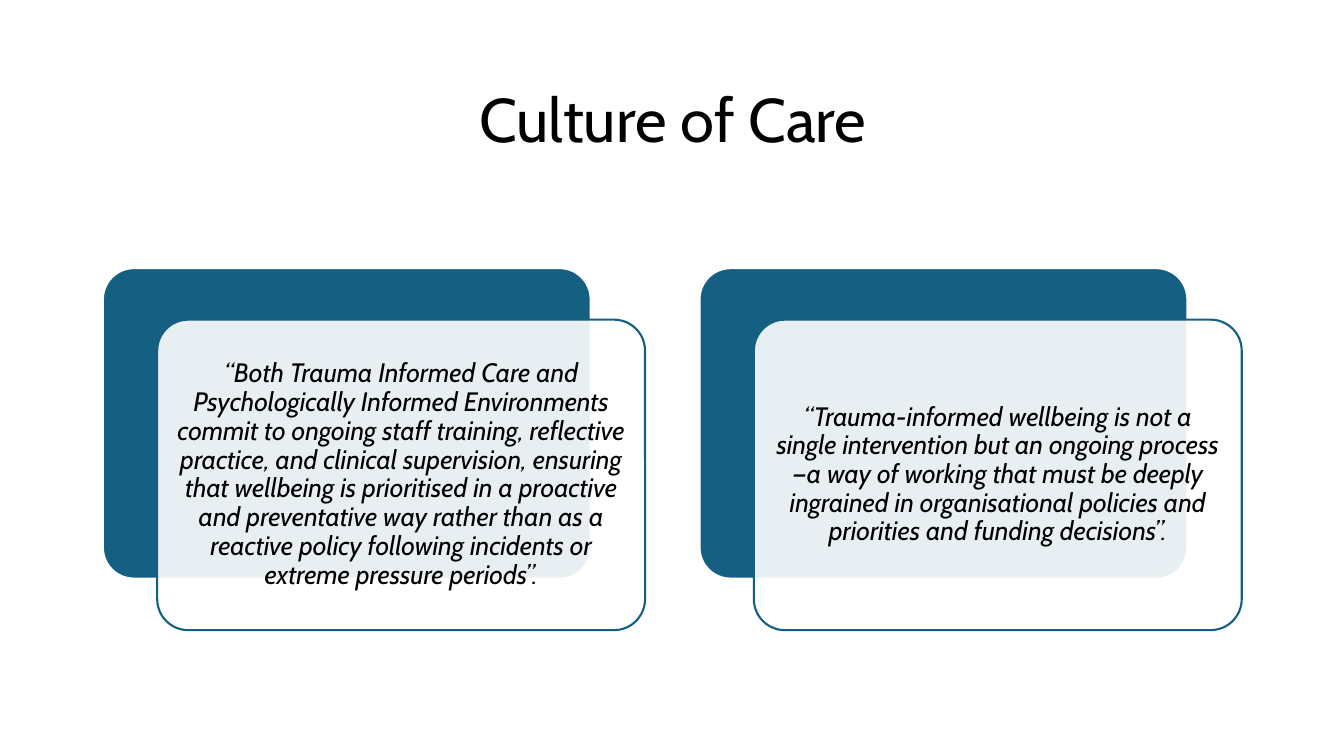
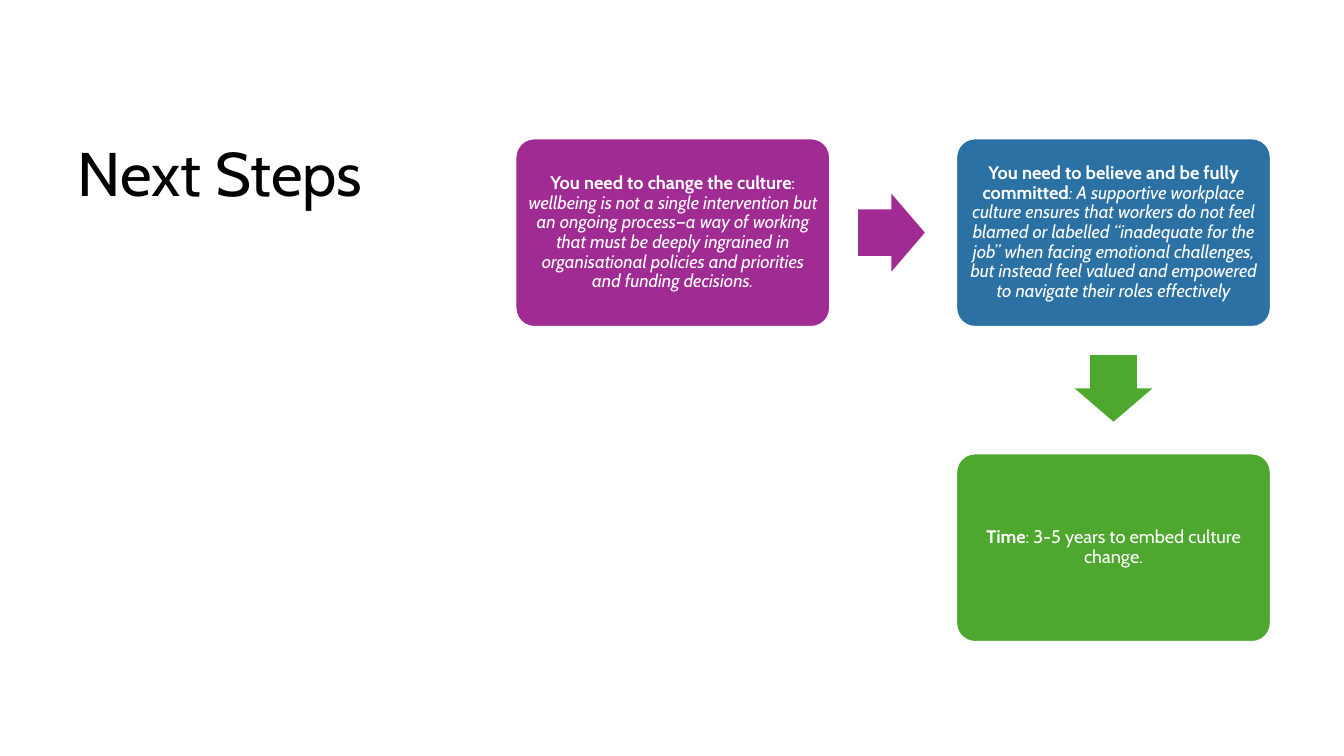
from lxml import etree
from pptx import Presentation
from pptx.dml.color import RGBColor
from pptx.enum.shapes import MSO_SHAPE
from pptx.enum.text import MSO_ANCHOR, MSO_AUTO_SIZE, PP_ALIGN
from pptx.oxml.ns import qn
from pptx.util import Pt

ROUNDED = MSO_SHAPE.ROUNDED_RECTANGLE
RIGHT_ARROW, DOWN_ARROW = MSO_SHAPE.RIGHT_ARROW, MSO_SHAPE.DOWN_ARROW
LEFT, CENTER = PP_ALIGN.LEFT, PP_ALIGN.CENTER
TOP, MIDDLE = MSO_ANCHOR.TOP, MSO_ANCHOR.MIDDLE
NO_AUTOFIT = MSO_AUTO_SIZE.NONE

FONT = "Cabin"
COLORS = {
    "text": "000000",
    "white": "FFFFFF",
    "teal": "156082",
    "purple": "A02B93",
    "blue": "2C71A4",
    "green": "4EA72E",
}
TITLE_ONLY = 5

QUOTES = [
    "“Both Trauma Informed Care and Psychologically Informed Environments commit "
    "to ongoing staff training, reflective practice, and clinical supervision, "
    "ensuring that wellbeing is prioritised in a proactive and preventative way "
    "rather than as a reactive policy following incidents or extreme pressure "
    "periods”.",
    "“Trauma-informed wellbeing is not a single intervention but an ongoing "
    "process—a way of working that must be deeply ingrained in organisational "
    "policies and priorities and funding decisions”.",
]
QUOTE_LEFT, QUOTE_TOP = 73.5, 191.5
QUOTE_WIDTH, QUOTE_HEIGHT = 348.5, 221.8
QUOTE_PITCH = 426.2
FRONT_DX, FRONT_DY = 38.8, 36.8

STEP_LEFT, STEP_TOP = 368.2, 98.8
STEP_WIDTH, STEP_HEIGHT = 224.8, 134.8
STEP_PITCH_X, STEP_PITCH_Y = 314.8, 225
ARROW_LENGTH, ARROW_BREADTH, ARROW_GAP = 47.6, 55.6, 20

# column, row, fill, runs of (text, style)
STEPS = [
    (0, 0, "purple", [
        ("You need to change the culture", "bold"),
        (": ", "plain"),
        ("wellbeing is not a single intervention but an ongoing process—a way of "
         "working that must be deeply ingrained in organisational policies and "
         "priorities and funding decisions.", "italic"),
    ]),
    (1, 0, "blue", [
        ("You need to believe and be fully committed", "bold"),
        (": A supportive workplace culture ensures that workers do not feel blamed "
         "or labelled “inadequate for the job” when facing emotional challenges, "
         "but instead feel valued and empowered to navigate their roles "
         "effectively", "italic"),
    ]),
    (1, 1, "green", [
        ("Time", "bold"),
        (": 3-5 years to embed culture change.", "plain"),
    ]),
]


def rgb(color):
    return RGBColor.from_string(COLORS[color])


def format_paragraph(paragraph, size, color, align):
    paragraph.alignment = align
    paragraph.line_spacing = 0.9
    paragraph.font.name = FONT
    paragraph.font.size = Pt(size)
    paragraph.font.color.rgb = rgb(color)


def add_titled_slide(prs, title, box, align, anchor):
    slide = prs.slides.add_slide(prs.slide_layouts[TITLE_ONLY])
    heading = slide.shapes.title
    heading.left, heading.top, heading.width, heading.height = map(Pt, box)
    frame = heading.text_frame
    frame.text = title
    frame.auto_size = NO_AUTOFIT
    frame.vertical_anchor = anchor
    format_paragraph(frame.paragraphs[0], 44, "text", align)
    return slide


def add_block(slide, kind, box, fill, adjustments, outline=None):
    block = slide.shapes.add_shape(kind, *map(Pt, box))
    block.shadow.inherit = False
    for index, value in enumerate(adjustments):
        block.adjustments[index] = value
    block.fill.solid()
    block.fill.fore_color.rgb = rgb(fill)
    if outline:
        block.line.color.rgb = rgb(outline)
        block.line.width = Pt(1.5)
    else:
        block.line.fill.background()
    return block


def add_card(slide, box, fill, outline):
    return add_block(slide, ROUNDED, box, fill, [0.1], outline)


def write_card(card, runs, size, color, margin):
    frame = card.text_frame
    frame.word_wrap = True
    frame.vertical_anchor = MIDDLE
    frame.margin_left = frame.margin_right = Pt(margin)
    frame.margin_top = frame.margin_bottom = Pt(margin)
    paragraph = frame.paragraphs[0]
    format_paragraph(paragraph, size, color, CENTER)
    for text, style in runs:
        run = paragraph.add_run()
        run.text = text
        run.font.bold = style == "bold"
        run.font.italic = style == "italic"


def set_opacity(block, percent):
    color = block.fill._xPr.find(qn("a:solidFill"))[0]
    etree.SubElement(color, qn("a:alpha"), val=str(percent * 1000))


def add_quote(slide, left, quote):
    """Draw a solid card with a translucent quote card offset in front of it."""
    size = (QUOTE_WIDTH, QUOTE_HEIGHT)
    add_card(slide, (left, QUOTE_TOP, *size), "teal", "white")
    front = add_card(slide, (left + FRONT_DX, QUOTE_TOP + FRONT_DY, *size),
                     "white", "teal")
    set_opacity(front, 90)
    write_card(front, [(quote, "italic")], 19, "text", 5.7)


def step_position(column, row):
    return STEP_LEFT + column * STEP_PITCH_X, STEP_TOP + row * STEP_PITCH_Y


def add_step(slide, column, row, fill, runs):
    box = (*step_position(column, row), STEP_WIDTH, STEP_HEIGHT)
    write_card(add_card(slide, box, fill, "white"), runs, 13, "white", 3.9)


def add_arrow_right(slide, column, row, fill):
    left, top = step_position(column, row)
    box = (left + STEP_WIDTH + ARROW_GAP, top + (STEP_HEIGHT - ARROW_BREADTH) / 2,
           ARROW_LENGTH, ARROW_BREADTH)
    add_block(slide, RIGHT_ARROW, box, fill, [0.6, 0.5])


def add_arrow_down(slide, column, row, fill):
    left, top = step_position(column, row)
    box = (left + (STEP_WIDTH - ARROW_BREADTH) / 2, top + STEP_HEIGHT + ARROW_GAP,
           ARROW_BREADTH, ARROW_LENGTH)
    add_block(slide, DOWN_ARROW, box, fill, [0.6, 0.5])


def build_culture(prs):
    slide = add_titled_slide(prs, "Culture of Care", (120, 43, 721.6, 89.4),
                             CENTER, MIDDLE)
    for index, quote in enumerate(QUOTES):
        add_quote(slide, QUOTE_LEFT + index * QUOTE_PITCH, quote)


def build_next_steps(prs):
    slide = add_titled_slide(prs, "Next Steps", (48.4, STEP_TOP, 275, 360),
                             LEFT, TOP)
    for step in STEPS:
        add_step(slide, *step)
    add_arrow_right(slide, 0, 0, "purple")
    add_arrow_down(slide, 1, 0, "green")


def main():
    prs = Presentation()
    prs.slide_width, prs.slide_height = Pt(960), Pt(540)
    build_culture(prs)
    build_next_steps(prs)
    prs.save("out.pptx")


if __name__ == "__main__":
    main()
